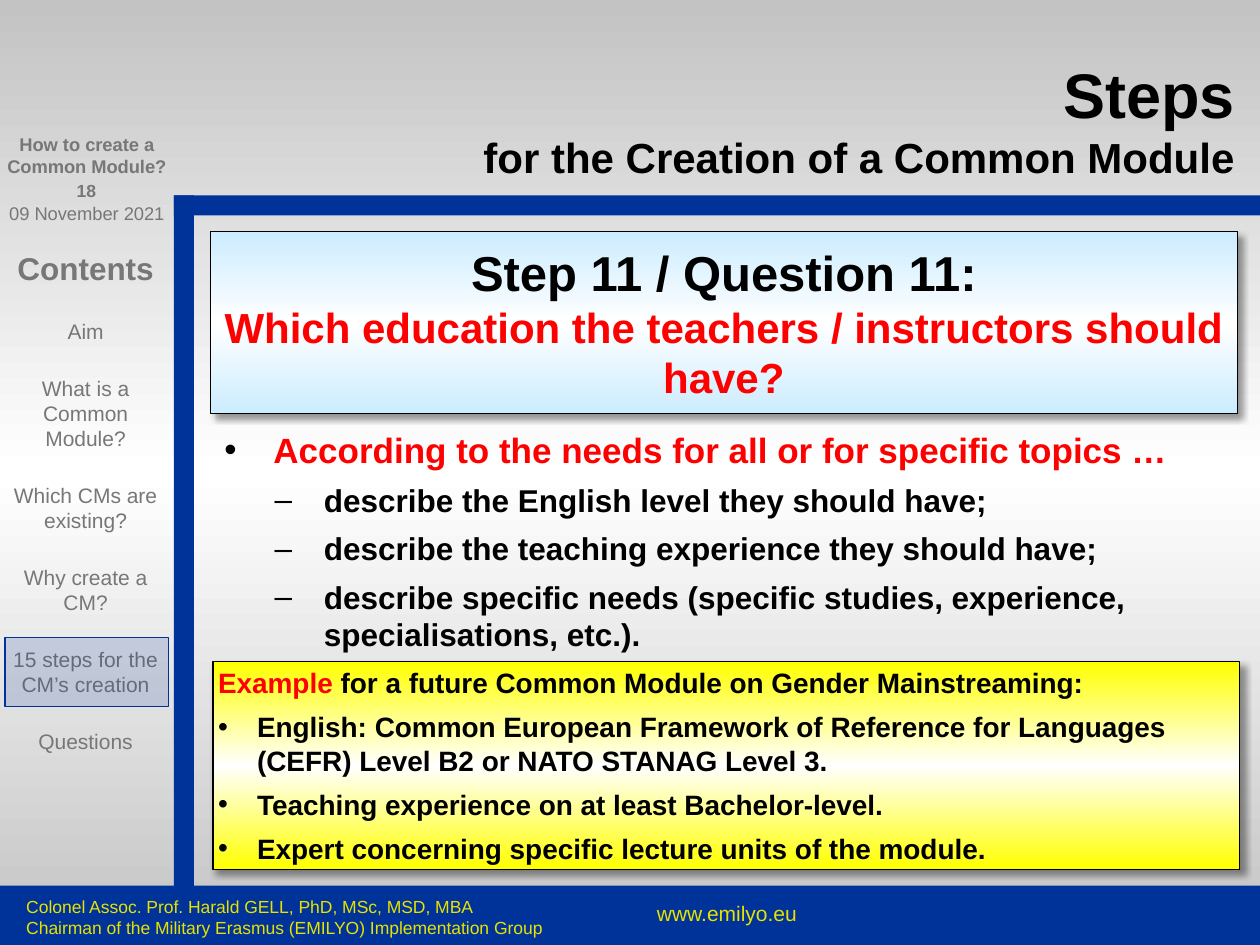
import copy
from dataclasses import dataclass

import pptx
import pptx.dml.color
import pptx.enum.shapes
import pptx.enum.text
import pptx.oxml
import pptx.oxml.ns
import pptx.util
from pptx.util import Inches

ALIGN = pptx.enum.text.PP_ALIGN
ANCHOR = pptx.enum.text.MSO_ANCHOR
qn = pptx.oxml.ns.qn
NS = pptx.oxml.ns.nsdecls("a")
BLUE, GREY, YELLOW, RED, BLACK = "003399", "777777", "E7E200", "FF0000", "000000"


@dataclass
class Box:
    x: float
    y: float
    w: float
    h: float

    def lengths(self) -> list:
        return [Inches(v) for v in (self.x, self.y, self.w, self.h)]


@dataclass
class Run:
    text: str
    size: float
    color: str = BLACK
    bold: bool = True


def rgb(color: str) -> pptx.dml.color.RGBColor:
    return pptx.dml.color.RGBColor.from_string(color)


def set_gradient(fill, element, edge: str) -> None:
    """Vertical gradient from edge to white and back to edge."""
    fill.gradient()
    fill.gradient_angle = 90
    stops = next(element.iter(qn("a:gsLst")))
    for gs in list(stops):
        stops.remove(gs)
    for pos, color in ((0, edge), (50, "FFFFFF"), (100, edge)):
        stops.append(pptx.oxml.parse_xml(
            f'<a:gs {NS} pos="{pos * 1000}"><a:srgbClr val="{color}"/></a:gs>'))


def add_rect(s, box: Box, fill: str, line: str = "", alpha: int = 100):
    sp = s.shapes.add_shape(pptx.enum.shapes.MSO_SHAPE.RECTANGLE, *box.lengths())
    sp.shadow.inherit = False
    sp.fill.solid()
    sp.fill.fore_color.rgb = rgb(fill)
    if alpha < 100:
        clr = next(sp._element.spPr.iter(qn("a:srgbClr")))
        clr.append(pptx.oxml.parse_xml(f'<a:alpha {NS} val="{alpha * 1000}"/>'))
    if line:
        sp.line.color.rgb = rgb(line)
        sp.line.width = pptx.util.Pt(0.75)
    else:
        sp.line.fill.background()
    return sp


def add_panel(s, box: Box, edge: str):
    """Outlined gradient rectangle with a soft shadow."""
    sp = add_rect(s, box, edge, BLACK)
    set_gradient(sp.fill, sp._element.spPr, edge)
    sp._element.spPr.find(qn("a:effectLst")).append(pptx.oxml.parse_xml(
        f'<a:outerShdw {NS} blurRad="50800" dist="38100" dir="2700000" algn="tl" rotWithShape="0">'
        f'<a:srgbClr val="{BLACK}"><a:alpha val="40000"/></a:srgbClr></a:outerShdw>'))
    return sp


def add_textbox(s, box: Box):
    return s.shapes.add_textbox(*box.lengths())


def setup_frame(sp, insets=(0.1, 0.05, 0.1, 0.05), anchor=ANCHOR.TOP, wrap: bool = True):
    tf = sp.text_frame
    tf.word_wrap = wrap
    tf.auto_size = pptx.enum.text.MSO_AUTO_SIZE.NONE
    tf.vertical_anchor = anchor
    tf.margin_left, tf.margin_top, tf.margin_right, tf.margin_bottom = map(Inches, insets)
    return tf


def add_text(tf, *runs: Run, align=ALIGN.LEFT, before: float = 0, after: float = 0,
             bullet: str = "", left: float = 0, hang: float = 0, level: int = 0) -> None:
    """Fill the empty first paragraph, or append one."""
    p = tf.paragraphs[0] if not tf.text else tf.add_paragraph()
    p.alignment, p.level = align, level
    p.space_before, p.space_after = pptx.util.Pt(before), pptx.util.Pt(after)
    if bullet:
        pPr = p._p.get_or_add_pPr()
        pPr.set("marL", str(Inches(left)))
        pPr.set("indent", str(-Inches(hang)))
        for xml in (f'<a:buClr {NS}><a:srgbClr val="{BLACK}"/></a:buClr>',
                    f'<a:buFont {NS} typeface="Arial"/>',
                    f'<a:buChar {NS} char="{bullet}"/>'):
            pPr.append(pptx.oxml.parse_xml(xml))
    for i, run in enumerate(runs):
        if run.text.startswith("\v"):
            p.add_line_break()
            # The break takes the height of the line it ends
            p._p.findall(qn("a:br"))[-1].append(copy.deepcopy(p.runs[i - 1]._r.rPr))
        r = p.add_run()
        r.text = run.text.lstrip("\v")
        r.font.name, r.font.size, r.font.bold = "Arial", pptx.util.Pt(run.size), run.bold
        r.font.color.rgb = rgb(run.color)


def add_frame(s) -> None:
    """Blue bars, sidebar and footer."""
    add_rect(s, Box(1.38, 1.55, 0.16, 5.6), BLUE)
    add_rect(s, Box(1.38, 1.55, 8.62, 0.16), BLUE)
    add_rect(s, Box(0, 7.03, 10, 0.47), BLUE)

    # Sidebar heading, slide number and date
    tf = setup_frame(add_textbox(s, Box(0, 1.06, 1.38, 0.82)), (0, 0, 0, 0))
    add_text(tf, Run("How to create a", 10.5, GREY), align=ALIGN.CENTER)
    add_text(tf, Run("Common Module?", 10.5, GREY), align=ALIGN.CENTER)
    add_text(tf, Run("09 November 2021", 10.5, GREY, False), align=ALIGN.CENTER, before=13.8)
    tf = setup_frame(add_textbox(s, Box(0.44, 1.38, 0.49, 0.27)), wrap=False)
    add_text(tf, Run("18", 10, GREY), align=ALIGN.CENTER)

    # Contents list
    tf = setup_frame(add_textbox(s, Box(0.05, 1.94, 1.26, 5.04)), (0.04,) * 4)
    add_text(tf, Run("Contents", 18, GREY), align=ALIGN.CENTER, after=18)
    for item in ("Aim", "What is a Common Module?", "Which CMs are existing?",
                 "Why create a CM?", "15 steps for the CM’s creation", "Questions"):
        add_text(tf, Run(item, 12, GREY, False), align=ALIGN.CENTER, after=18)

    # Footer
    tf = setup_frame(add_textbox(s, Box(4.9, 7.1, 1.74, 0.35)))
    add_text(tf, Run("www.emilyo.eu", 12, YELLOW, False), align=ALIGN.CENTER)
    tf = setup_frame(add_textbox(s, Box(0.11, 7.06, 4.38, 0.35)))
    for line in ("Colonel Assoc. Prof. Harald GELL, PhD, MSc, MSD, MBA",
                 "Chairman of the Military Erasmus (EMILYO) Implementation Group"):
        add_text(tf, Run(line, 10, YELLOW, False))


def add_content(s) -> None:
    # Title
    title = s.shapes.title
    title.left, title.top, title.width, title.height = Box(1.38, 0.19, 8.42, 1.25).lengths()
    tf = setup_frame(title, (0, 0, 0, 0), ANCHOR.BOTTOM)
    add_text(tf, Run("Steps", 36), Run("\vfor the Creation of a Common Module", 24),
             align=ALIGN.RIGHT)

    # Question
    tf = setup_frame(add_panel(s, Box(1.67, 1.84, 8.15, 1.44), "CCECFF"),
                     (0, 0.04, 0, 0.04), ANCHOR.MIDDLE)
    add_text(tf, Run("Step 11 / Question 11:", 28),
             Run("\vWhich education the teachers / instructors should have?", 24, RED),
             align=ALIGN.CENTER, after=6)

    # Example
    tf = setup_frame(add_panel(s, Box(1.69, 5.25, 8.15, 1.65), "FFFF00"),
                     (0.04,) * 4, ANCHOR.MIDDLE)
    add_text(tf, Run("Example ", 16, RED),
             Run("for a future Common Module on Gender Mainstreaming:", 16), after=6)
    for item in ("English: Common European Framework of Reference for Languages (CEFR) "
                 "Level B2 or NATO STANAG Level 3.",
                 "Teaching experience on at least Bachelor-level.",
                 "Expert concerning specific lecture units of the module."):
        add_text(tf, Run(item, 16), after=6, bullet="•", left=0.31, hang=0.31)

    # Answer
    tf = setup_frame(add_textbox(s, Box(1.78, 3.36, 7.99, 1.89)), (0, 0.04, 0, 0.04))
    add_text(tf, Run("According to the needs for all or for specific topics …", 20, RED),
             after=6, bullet="•", left=0.39, hang=0.39)
    for item in ("describe the English level they should have;",
                 "describe the teaching experience they should have;",
                 "describe specific needs (specific studies, experience, specialisations, etc.)."):
        add_text(tf, Run(item, 18), after=6, bullet="–", left=0.79, hang=0.39, level=1)

    # Marker on the current chapter
    add_rect(s, Box(0.04, 5.06, 1.3, 0.55), BLUE, BLUE, alpha=16)


def main() -> None:
    prs = pptx.Presentation()
    prs.slide_width, prs.slide_height = Inches(10), Inches(7.5)
    s = prs.slides.add_slide(prs.slide_layouts[5])
    set_gradient(s.background.fill, s._element, "C3C3C3")
    add_frame(s)
    add_content(s)
    prs.save("out.pptx")


if __name__ == "__main__":
    main()
